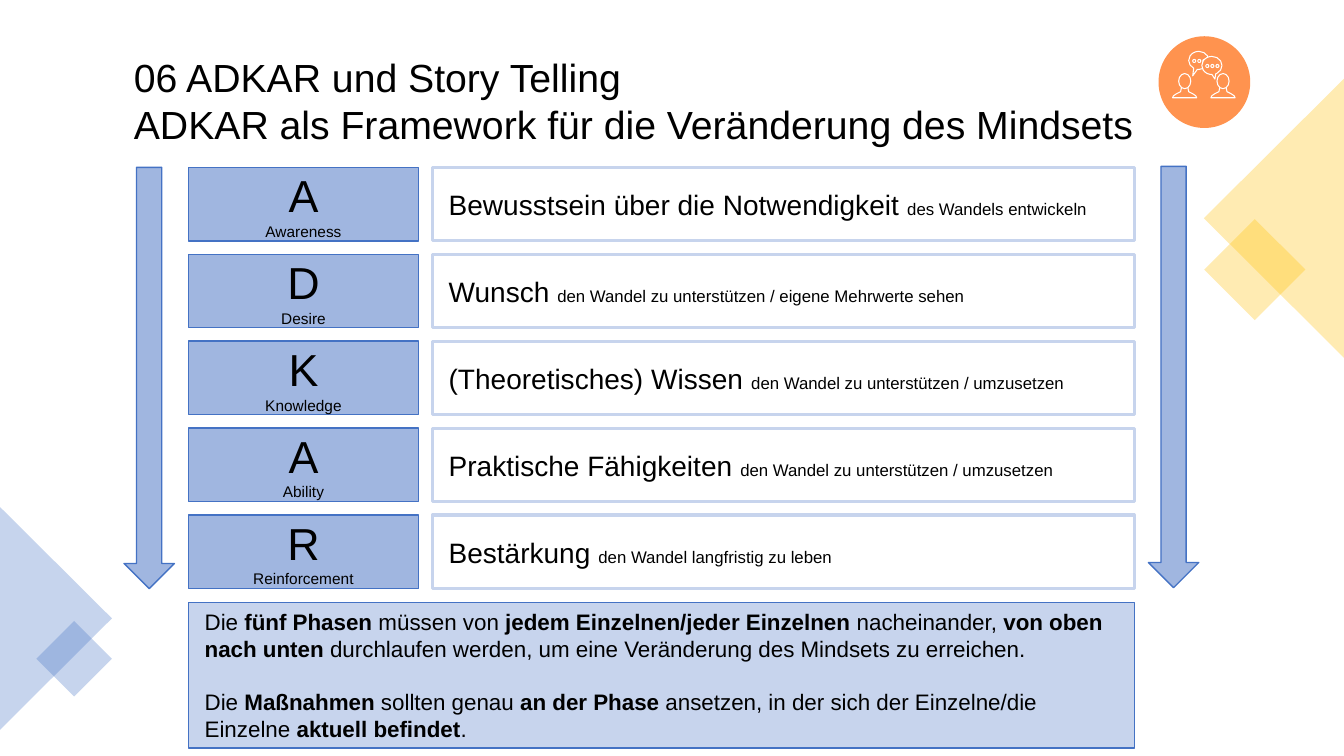
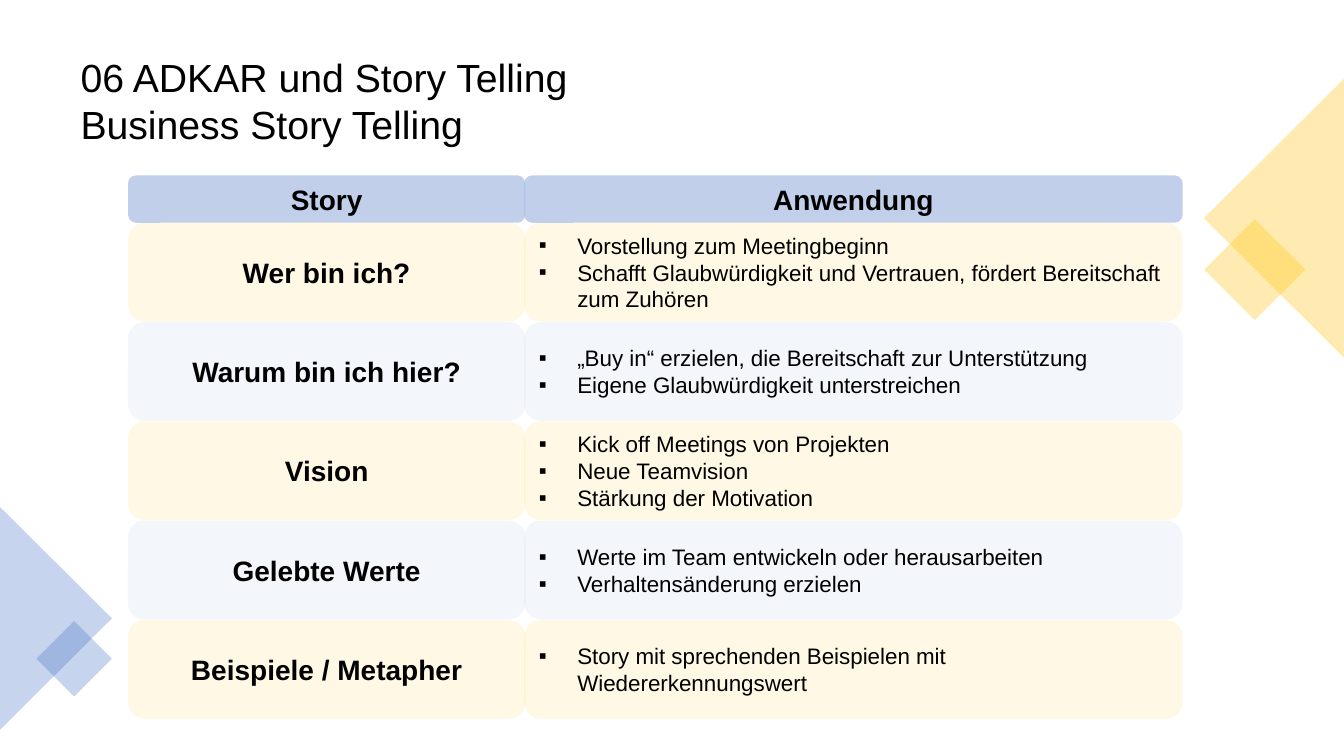
from dataclasses import dataclass

from lxml.etree import SubElement
from pptx import Presentation
from pptx.dml.color import RGBColor
from pptx.enum.shapes import MSO_SHAPE as Preset
from pptx.enum.text import MSO_ANCHOR as Anchor, PP_ALIGN as Align
from pptx.oxml.ns import qn
from pptx.util import Inches, Pt


@dataclass(frozen=True)
class Theme:
    font: str = "Arial"
    ink: str = "000000"
    white: str = "FFFFFF"
    blue: str = "4472C4"
    mid_blue: str = "A0B6E0"
    pale_blue: str = "C7D4ED"
    gold: str = "FFC000"
    pale_gold: str = "FFDE7C"
    orange: str = "FF934F"
    title: int = 28
    letter: int = 32
    heading: int = 20
    body: int = 16
    detail: int = 12
    caption: int = 11


THEME = Theme()
WIDE_INSETS = (0.16, 0.12)
PLAIN_INSETS = (0.1, 0.05)


class Deck:
    """Holds the style and the current slide."""

    def __init__(self, theme):
        self.theme = theme
        self.show = Presentation()
        self.show.slide_width, self.show.slide_height = Inches(13.33), Inches(7.5)
        self.slide = None

    def new_slide(self, title_lines, left, width):
        self.slide = self.show.slides.add_slide(self.show.slide_layouts[6])
        self.corner_diamonds()
        title = self.slide.shapes.add_textbox(
            Inches(left), Inches(0.48), Inches(width), Inches(1.04))
        self.set_text(title, [[(line, self.theme.title)] for line in title_lines],
                      anchor=Anchor.TOP)

    def corner_diamonds(self):
        for preset, place, turn, color in (
                (Preset.RECTANGLE, (12.09, 2.32, 0.71, 0.71), 45, self.theme.gold),
                (Preset.ISOSCELES_TRIANGLE, (11.25, 1.47, 2.77, 1.39), 270, self.theme.gold),
                (Preset.ISOSCELES_TRIANGLE, (-0.55, 5.58, 2.21, 1.11), 90, self.theme.blue),
                (Preset.RECTANGLE, (0.47, 6.27, 0.53, 0.53), 45, self.theme.blue)):
            self.shape(preset, place, color, opacity=30).rotation = turn

    def shape(self, preset, place, fill=None, line=None, weight=1, opacity=100):
        shape = self.slide.shapes.add_shape(preset, *map(Inches, place))
        self.paint(shape, fill, line, weight, opacity)
        return shape

    def paint(self, shape, fill=None, line=None, weight=1, opacity=100):
        shape.shadow.inherit = False
        if fill:
            shape.fill.solid()
            shape.fill.fore_color.rgb = RGBColor.from_string(fill)
        else:
            shape.fill.background()
        if opacity < 100:
            color = shape.fill._xPr.find(qn("a:solidFill"))[0]
            SubElement(color, qn("a:alpha")).set("val", str(opacity * 1000))
        if line:
            shape.line.color.rgb = RGBColor.from_string(line)
            shape.line.width = Pt(weight)
        else:
            shape.line.fill.background()

    def set_text(self, shape, paragraphs, align=Align.LEFT, anchor=Anchor.MIDDLE,
                 insets=PLAIN_INSETS, bullets=False, gap=0):
        """Each paragraph is a list of runs: (text, size) or (text, size, bold)."""
        frame = shape.text_frame
        frame.word_wrap = True
        frame.vertical_anchor = anchor
        frame.margin_left = frame.margin_right = Inches(insets[0])
        frame.margin_top = frame.margin_bottom = Inches(insets[1])
        for number, runs in enumerate(paragraphs):
            paragraph = frame.add_paragraph() if number else frame.paragraphs[0]
            paragraph.alignment = align
            if bullets:
                self.bullet(paragraph)
            if number and gap:
                paragraph.space_before = Pt(gap)
            for text, size, *bold in runs:
                run = paragraph.add_run()
                run.text = text
                run.font.name = self.theme.font
                run.font.size = Pt(size)
                run.font.bold = any(bold)
                run.font.color.rgb = RGBColor.from_string(self.theme.ink)

    def bullet(self, paragraph):
        properties = paragraph._p.get_or_add_pPr()
        properties.set("marL", str(Inches(0.38)))
        properties.set("indent", str(-Inches(0.38)))
        SubElement(properties, qn("a:buFont")).set("typeface", self.theme.font)
        SubElement(properties, qn("a:buChar")).set("char", "▪")

    def outline(self, points):
        """Open white line through the points."""
        corners = [(Inches(x), Inches(y)) for x, y in points]
        builder = self.slide.shapes.build_freeform(*corners[0])
        builder.add_line_segments(corners[1:], close=False)
        self.paint(builder.convert_to_shape(), line=self.theme.white, weight=0.75)

    def dialogue_badge(self):
        orange, white = self.theme.orange, self.theme.white
        self.shape(Preset.OVAL, (11.49, 0.36, 0.91, 0.91), orange)
        # Two people
        half = [(0.12, 0.97), (0.11, 0.95), (0.08, 0.93), (0.04, 0.91), (0.03, 0.86)]
        for center in (11.75, 12.13):
            left = [(center - x, y) for x, y in half]
            right = [(center + x, y) for x, y in reversed(half)]
            self.outline(left + right + left[:1])
            self.shape(Preset.OVAL, (center - 0.06, 0.73, 0.12, 0.15), orange, white, 0.75)
        # Speech bubbles with three dots each
        for left, top, tip in ((11.79, 0.51, (-0.3, 0.85)), (11.92, 0.56, (0.15, 0.75))):
            bubble = self.shape(Preset.OVAL_CALLOUT, (left, top, 0.2, 0.18),
                                orange, white, 0.75)
            bubble.adjustments[0], bubble.adjustments[1] = tip
            for step in range(3):
                self.shape(Preset.OVAL, (left + 0.04 + 0.05 * step, top + 0.08, 0.03, 0.03),
                           line=white, weight=0.75)


def adkar_slide(deck):
    theme = deck.theme
    deck.new_slide(["06 ADKAR und Story Telling",
                    "ADKAR als Framework für die Veränderung des Mindsets"], 1.23, 10.47)
    deck.dialogue_badge()

    # Five phases
    phases = [
        ("Awareness", "Bewusstsein über die Notwendigkeit ", "des Wandels entwickeln"),
        ("Desire", "Wunsch ", "den Wandel zu unterstützen / eigene Mehrwerte sehen"),
        ("Knowledge", "(Theoretisches) Wissen ", "den Wandel zu unterstützen / umzusetzen"),
        ("Ability", "Praktische Fähigkeiten ", "den Wandel zu unterstützen / umzusetzen"),
        ("Reinforcement", "Bestärkung ", "den Wandel langfristig zu leben"),
    ]
    first_top, last_top = 1.66, 5.11
    pitch = (last_top - first_top) / (len(phases) - 1)
    for row, (phase, goal, detail) in enumerate(phases):
        top = first_top + row * pitch
        initial = deck.shape(Preset.RECTANGLE, (1.87, top, 2.28, 0.73),
                             theme.mid_blue, theme.blue)
        deck.set_text(initial, [[(phase[0], theme.letter)], [(phase, theme.caption)]],
                      align=Align.CENTER, insets=WIDE_INSETS)
        meaning = deck.shape(Preset.RECTANGLE, (4.29, top, 6.96, 0.73),
                             line=theme.pale_blue, weight=2.25)
        deck.set_text(meaning, [[(goal, theme.heading), (detail, theme.detail)]],
                      insets=WIDE_INSETS)

    # Conclusion
    size = theme.body
    conclusion = deck.shape(Preset.RECTANGLE, (1.87, 5.98, 9.38, 1.44),
                            theme.pale_blue, theme.blue)
    deck.set_text(conclusion, [
        [("Die ", size), ("fünf Phasen ", size, True), ("müssen von ", size),
         ("jedem Einzelnen/jeder Einzelnen ", size, True), ("nacheinander, ", size),
         ("von oben nach unten ", size, True),
         ("durchlaufen werden, um eine Veränderung des Mindsets zu erreichen.", size)],
        [("Die ", size), ("Maßnahmen ", size, True), ("sollten genau ", size),
         ("an der Phase ", size, True),
         ("ansetzen, in der sich der Einzelne/die Einzelne ", size),
         ("aktuell befindet", size, True), (".", size)],
    ], insets=WIDE_INSETS, gap=19)

    # Direction arrows
    for left, top in ((1.23, 1.66), (11.39, 1.65)):
        deck.shape(Preset.DOWN_ARROW, (left, top, 0.5, 4.18), theme.mid_blue, theme.blue)


def story_slide(deck):
    theme = deck.theme
    deck.new_slide(["06 ADKAR und Story Telling", "Business Story Telling"], 0.7, 8.85)
    columns = ((1.27, 3.94), (5.2, 6.53))

    # Stories and their uses
    stories = [
        ("Wer bin ich?", [
            "Vorstellung zum Meetingbeginn",
            "Schafft Glaubwürdigkeit und Vertrauen, fördert Bereitschaft zum Zuhören"]),
        ("Warum bin ich hier?", [
            "„Buy in“ erzielen, die Bereitschaft zur Unterstützung",
            "Eigene Glaubwürdigkeit unterstreichen"]),
        ("Vision", [
            "Kick off Meetings von Projekten",
            "Neue Teamvision",
            "Stärkung der Motivation"]),
        ("Gelebte Werte", [
            "Werte im Team entwickeln oder herausarbeiten",
            "Verhaltensänderung erzielen"]),
        ("Beispiele / Metapher", [
            "Story mit sprechenden Beispielen mit Wiedererkennungswert"]),
    ]
    first_top, last_top = 2.21, 6.15
    pitch = (last_top - first_top) / (len(stories) - 1)
    for row, (story, uses) in enumerate(stories):
        color = theme.pale_blue if row % 2 else theme.pale_gold
        name_cell, use_cell = [
            deck.shape(Preset.ROUNDED_RECTANGLE,
                       (left, first_top + row * pitch, width, 0.98), color, opacity=20)
            for left, width in columns]
        deck.set_text(name_cell, [[(story, theme.heading, True)]], align=Align.CENTER)
        deck.set_text(use_cell, [[(use, theme.body)] for use in uses], bullets=True)

    # Column headings
    for (left, width), heading in zip(columns, ("Story", "Anwendung")):
        header = deck.shape(Preset.ROUNDED_RECTANGLE, (left, 1.74, width, 0.47),
                            theme.mid_blue, opacity=65)
        deck.set_text(header, [[(heading, theme.heading, True)]], align=Align.CENTER)


def main():
    deck = Deck(THEME)
    adkar_slide(deck)
    story_slide(deck)
    deck.show.save("out.pptx")


if __name__ == "__main__":
    main()
